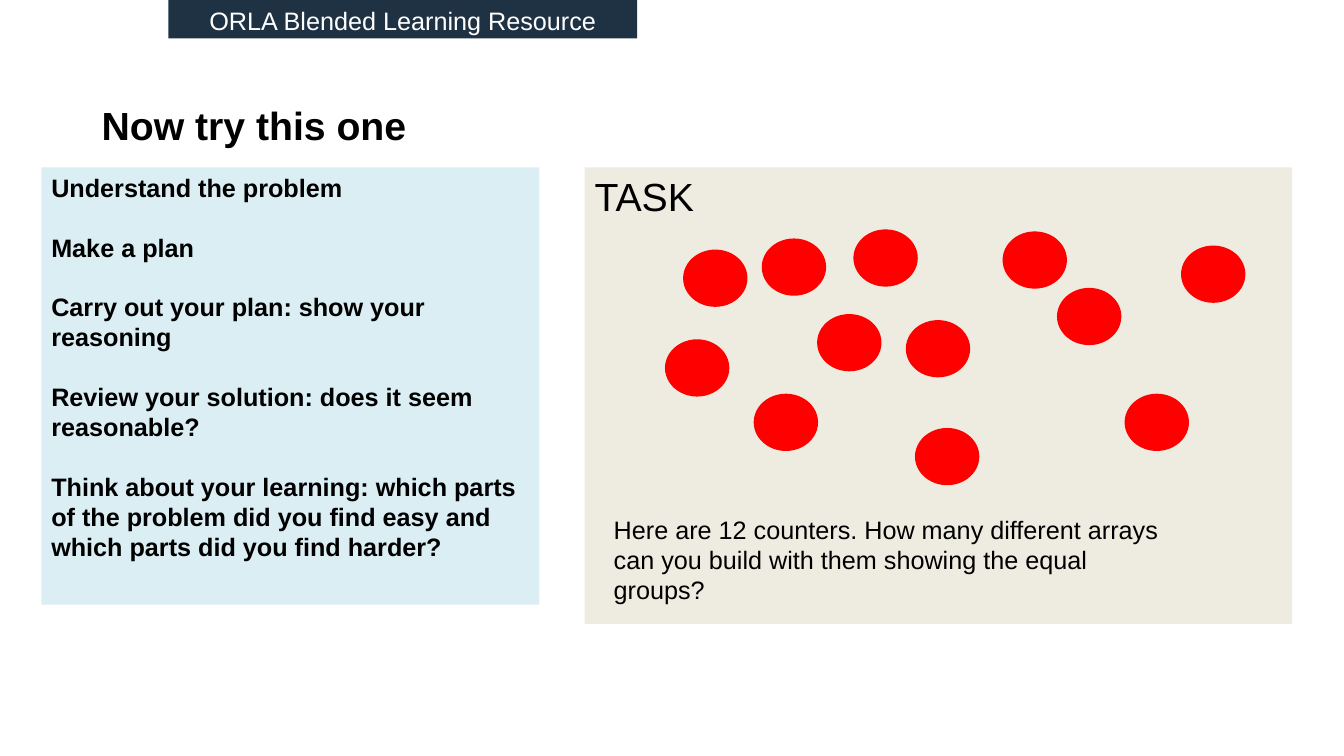
from pptx import Presentation
from pptx.dml.color import RGBColor
from pptx.enum.shapes import MSO_SHAPE as Shape
from pptx.enum.text import MSO_ANCHOR as Anchor, PP_ALIGN as Align
from pptx.util import Inches, Pt

BLACK = RGBColor(0x00, 0x00, 0x00)
WHITE = RGBColor(0xFF, 0xFF, 0xFF)
NAVY = RGBColor(0x1F, 0x32, 0x44)
PALE_BLUE = RGBColor(0xDB, 0xEE, 0xF4)
CREAM = RGBColor(0xEE, 0xEC, 0xE1)
RED = RGBColor(0xFF, 0x00, 0x00)

STEPS = [
    "Understand the problem",
    "Make a plan",
    "Carry out your plan: show your reasoning",
    "Review your solution: does it seem reasonable?",
    "Think about your learning: which parts of the problem did you find easy "
    "and which parts did you find harder?",
]

# Left and top of each counter, in percent of the slide
COUNTERS = [
    (50.93, 33.2), (56.78, 31.73), (60.9, 41.73), (49.58, 45.07),
    (67.5, 42.53), (63.6, 30.53), (56.18, 52.27), (87.98, 32.67),
    (78.75, 38.27), (68.18, 56.8), (83.78, 52.27), (74.7, 30.8),
]
COUNTER_SIZE = (4.58, 7.2)


class Page:
    """One slide with its style; places are percentages of the slide's size."""

    font_name = "Arial"
    body_size = 18
    heading_size = 28
    step_gap = 21

    def __init__(self, deck):
        self.deck = deck
        self.slide = deck.slides.add_slide(deck.slide_layouts[6])

    def place(self, left, top, width, height):
        across, down = self.deck.slide_width / 100, self.deck.slide_height / 100
        return (round(left * across), round(top * down),
                round(width * across), round(height * down))

    def fill_text(self, box, lines, size, color=BLACK, bold=False,
                  align=Align.LEFT, anchor=Anchor.TOP):
        frame = box.text_frame
        frame.word_wrap = True
        frame.vertical_anchor = anchor
        for index, line in enumerate(lines):
            para = frame.add_paragraph() if index else frame.paragraphs[0]
            para.text = line
            para.alignment = align
            if index:
                para.space_before = Pt(self.step_gap)
            font = para.font
            font.name, font.size, font.bold = self.font_name, Pt(size), bold
            font.color.rgb = color

    def text(self, area, line, size, **style):
        box = self.slide.shapes.add_textbox(*self.place(*area))
        self.fill_text(box, [line], size, **style)

    def shape(self, kind, area, fill):
        shape = self.slide.shapes.add_shape(kind, *self.place(*area))
        shape.shadow.inherit = False
        shape.fill.solid()
        shape.fill.fore_color.rgb = fill
        return shape

    def panel(self, area, fill, lines, size, **style):
        box = self.shape(Shape.RECTANGLE, area, fill)
        box.line.fill.background()
        self.fill_text(box, lines, size, **style)

    def counter(self, left, top):
        disc = self.shape(Shape.OVAL, (left, top, *COUNTER_SIZE), RED)
        disc.line.color.rgb = RED
        disc.line.width = Pt(2)


def main():
    deck = Presentation()
    deck.slide_width, deck.slide_height = Inches(13.33), Inches(7.5)
    page = Page(deck)

    # Heading
    page.text((6.83, 12.27, 67.5, 8.53), "Now try this one",
              page.heading_size, bold=True, anchor=Anchor.MIDDLE)

    # Problem-solving steps
    page.panel((3.08, 22.13, 37.05, 57.87), PALE_BLUE, STEPS,
               page.body_size, bold=True)

    # Top banner
    page.panel((12.53, 0, 34.88, 5.07), NAVY, ["ORLA Blended Learning Resource"],
               page.body_size, color=WHITE, align=Align.CENTER)

    # Task with its counters and question
    page.panel((43.5, 22.13, 52.65, 60.4), CREAM, ["TASK"], page.heading_size)
    for left, top in COUNTERS:
        page.counter(left, top)
    page.text((44.93, 67.33, 43.05, 13.47),
              "Here are 12 counters. How many different arrays can you build "
              "with them showing the equal groups?", page.body_size)

    deck.save("out.pptx")


if __name__ == "__main__":
    main()
